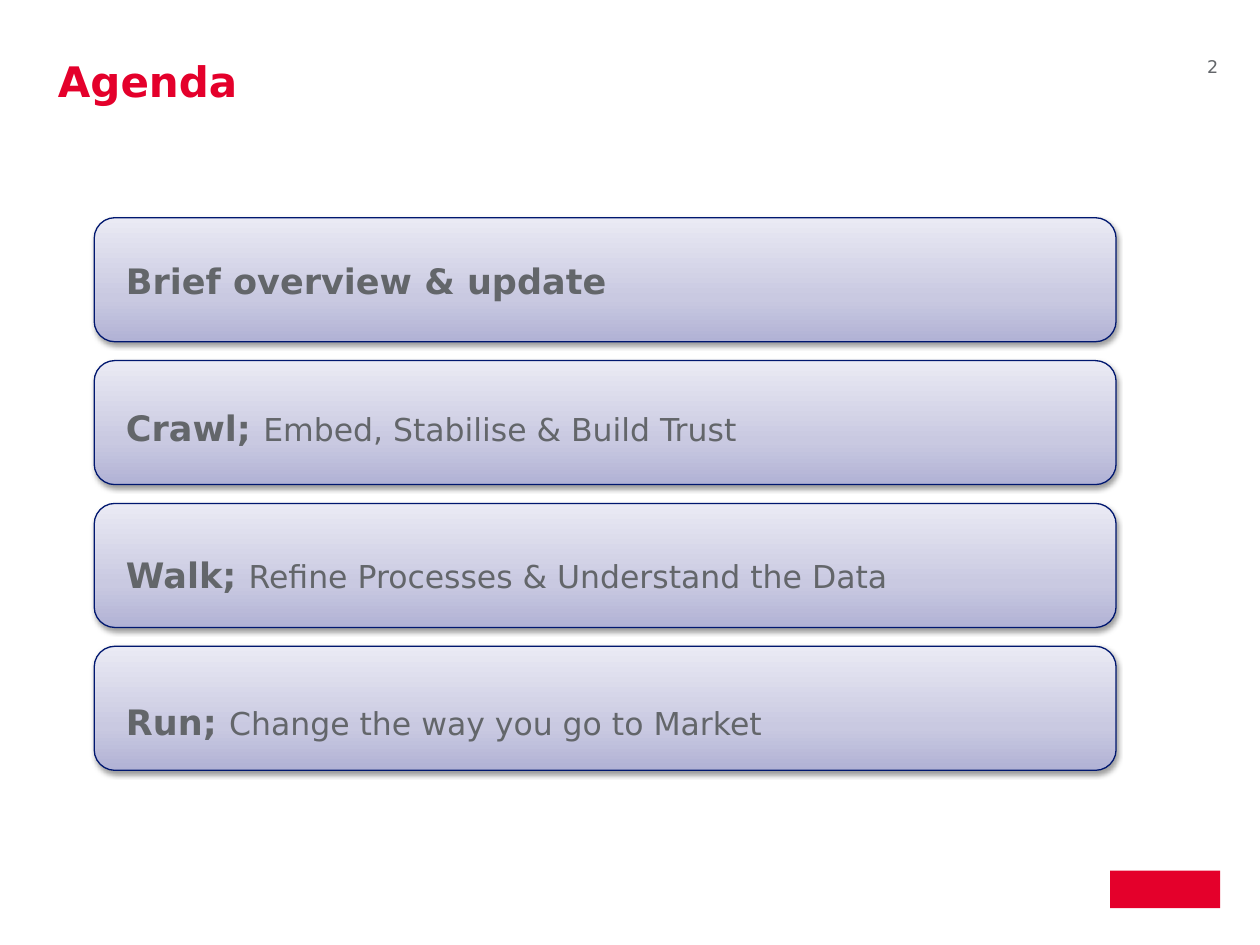
from copy import deepcopy
from dataclasses import dataclass

from lxml.etree import SubElement
from pptx import Presentation
from pptx.dml.color import RGBColor as Rgb
from pptx.enum.shapes import MSO_SHAPE as Preset
from pptx.enum.text import PP_ALIGN as Align
from pptx.oxml.ns import qn
from pptx.util import Cm, Pt


@dataclass(frozen=True)
class Theme:
    font: str = "DejaVu Sans"
    red: str = "E4002B"
    grey: str = "63666A"
    outline: str = "00176F"
    gradient: tuple = ((0, "B1B2D5"), (0.35, "C9C9E1"), (1, "EAEAF4"))
    title_size: int = 24
    topic_size: int = 20
    detail_size: int = 18
    number_size: int = 10


@dataclass(frozen=True)
class Box:
    left: float
    top: float
    width: float
    height: float

    def lengths(self) -> tuple:
        return Cm(self.left), Cm(self.top), Cm(self.width), Cm(self.height)


@dataclass(frozen=True)
class AgendaItem:
    topic: str
    detail: str = ""


THEME = Theme()
AGENDA = (
    AgendaItem("Brief overview & update"),
    AgendaItem("Crawl; ", "Embed, Stabilise & Build Trust"),
    AgendaItem("Walk; ", "Refine Processes & Understand the Data"),
    AgendaItem("Run; ", "Change the way you go to Market"),
)
FIRST_BAR = Box(1.9, 4.39, 20.6, 2.5)
BAR_PITCH = 2.88


def add_text_frame(slide, box: Box):
    frame = slide.shapes.add_textbox(*box.lengths()).text_frame
    frame.word_wrap = True
    frame.margin_left = frame.margin_right = 0
    frame.margin_top = frame.margin_bottom = 0
    return frame


def add_run(paragraph, text: str, size: int, color: str, bold: bool = False) -> None:
    run = paragraph.add_run()
    run.text = text
    run.font.name = THEME.font
    run.font.size = Pt(size)
    run.font.bold = bold
    run.font.color.rgb = Rgb.from_string(color)


def fill_gradient(shape) -> None:
    shape.fill.gradient()
    shape.fill.gradient_angle = 90
    stop_list = shape._element.spPr.find(qn("a:gradFill")).find(qn("a:gsLst"))
    stop_list.append(deepcopy(stop_list[0]))
    for stop, (position, color) in zip(shape.fill.gradient_stops, THEME.gradient):
        stop.position = position
        stop.color.rgb = Rgb.from_string(color)


def add_soft_shadow(shape) -> None:
    shape.shadow.inherit = False
    effects = shape._element.spPr.find(qn("a:effectLst"))
    shadow = SubElement(effects, qn("a:outerShdw"), blurRad=str(Pt(3.1)),
                        dist=str(Pt(1.6)), dir="5400000", rotWithShape="0")
    color = SubElement(shadow, qn("a:srgbClr"), val="000000")
    SubElement(color, qn("a:alpha"), val="38000")


def add_bar(slide, box: Box) -> None:
    bar = slide.shapes.add_shape(Preset.ROUNDED_RECTANGLE, *box.lengths())
    fill_gradient(bar)
    bar.line.color.rgb = Rgb.from_string(THEME.outline)
    bar.line.width = Pt(0.75)
    add_soft_shadow(bar)


def add_agenda(slide, box: Box) -> None:
    frame = add_text_frame(slide, box)
    for index, item in enumerate(AGENDA):
        paragraph = frame.add_paragraph() if index else frame.paragraphs[0]
        paragraph.line_spacing = 1.5
        paragraph.space_before = Pt(48 if index else 0)
        add_run(paragraph, item.topic, THEME.topic_size, THEME.grey, bold=True)
        if item.detail:
            add_run(paragraph, item.detail, THEME.detail_size, THEME.grey)


def main() -> None:
    deck = Presentation()
    deck.slide_width, deck.slide_height = Cm(25.4), Cm(19.05)
    slide = deck.slides.add_slide(deck.slide_layouts[6])

    # Plain block in the brand corner
    brand_block = slide.shapes.add_shape(
        Preset.RECTANGLE, *Box(22.38, 17.55, 2.22, 0.76).lengths())
    brand_block.shadow.inherit = False
    brand_block.fill.solid()
    brand_block.fill.fore_color.rgb = Rgb.from_string(THEME.red)
    brand_block.line.fill.background()

    # Bars behind the agenda
    for index in range(len(AGENDA)):
        top = FIRST_BAR.top + index * BAR_PITCH
        add_bar(slide, Box(FIRST_BAR.left, top, FIRST_BAR.width, FIRST_BAR.height))

    # Title and slide number
    title = add_text_frame(slide, Box(1.17, 1.12, 16, 2.2)).paragraphs[0]
    add_run(title, "Agenda", THEME.title_size, THEME.red, bold=True)
    number = add_text_frame(slide, Box(23.06, 1.12, 1.5, 0.5)).paragraphs[0]
    number.alignment = Align.RIGHT
    add_run(number, "2", THEME.number_size, THEME.grey)

    # Agenda text
    add_agenda(slide, Box(2.54, 4.8, 19.23, 11.5))

    deck.save("out.pptx")


if __name__ == "__main__":
    main()
